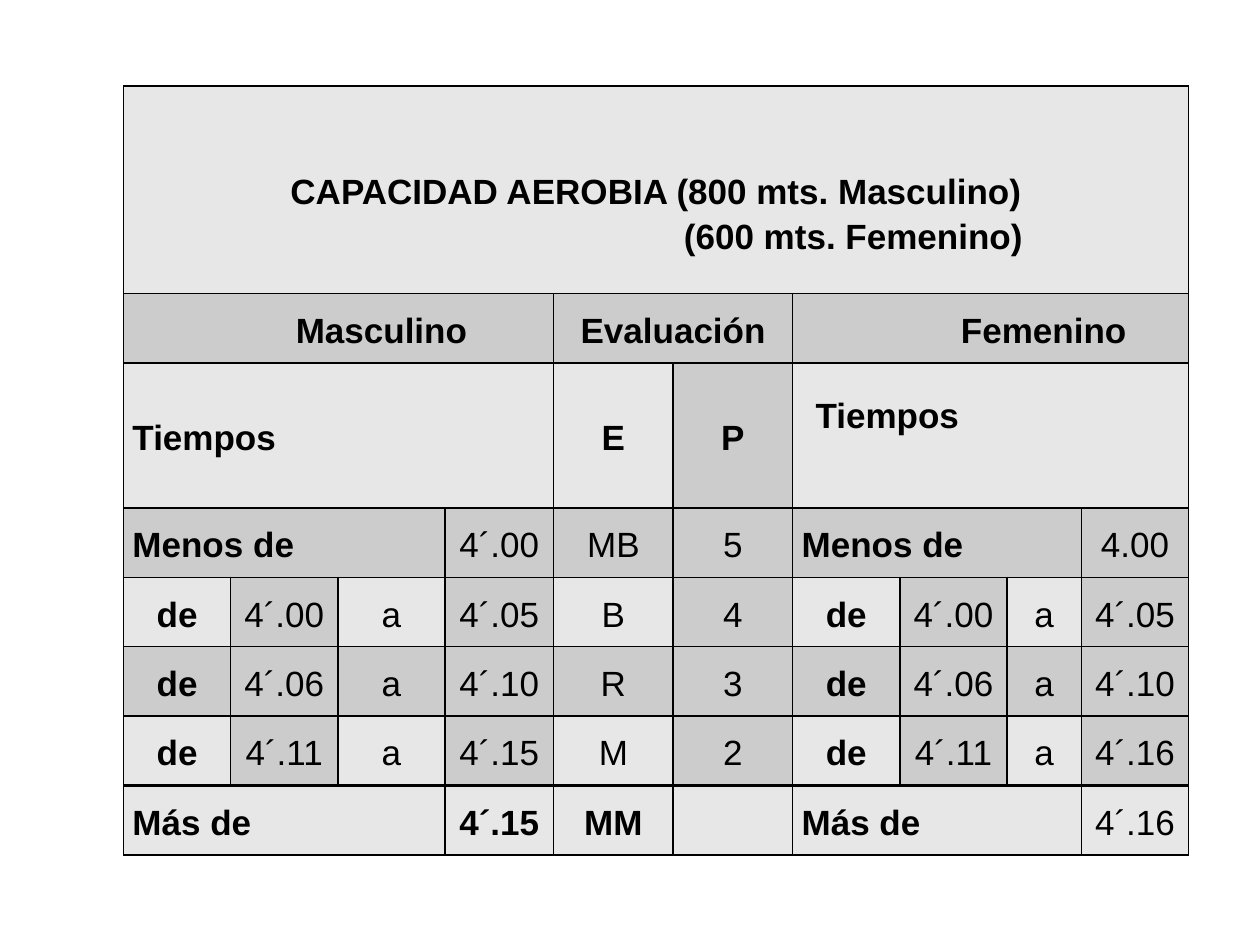
from lxml.etree import SubElement
from pptx import Presentation
from pptx.dml.color import RGBColor
from pptx.enum.text import MSO_ANCHOR as Anchor, PP_ALIGN as Align
from pptx.oxml.ns import qn
from pptx.util import Cm, Pt

BLACK = RGBColor(0x00, 0x00, 0x00)
LIGHT = RGBColor(0xE7, 0xE7, 0xE7)
DARK = RGBColor(0xCC, 0xCC, 0xCC)

COLUMN_WIDTHS = [2.16] * 4 + [2.41] * 2 + [2.16] * 2 + [1.5, 2.16]
ROW_HEIGHTS = [4.19, 1.4, 2.92] + [1.4] * 5
LAST_ROW = len(ROW_HEIGHTS) - 1
LINE_HEIGHT = 0.91
SIDE_MARGIN = 0.18

# Each row maps a starting column to its text
TITLE = "CAPACIDAD AEROBIA (800 mts. Masculino)\n(600 mts. Femenino)"
ROWS = [
    {0: TITLE},
    {0: "Masculino", 4: "Evaluación", 6: "Femenino"},
    {0: "Tiempos", 4: "E", 5: "P", 6: "Tiempos"},
    {0: "Menos de", 3: "4´.00", 4: "MB", 5: "5", 6: "Menos de", 9: "4.00"},
    dict(enumerate(["de", "4´.00", "a", "4´.05", "B", "4", "de", "4´.00", "a", "4´.05"])),
    dict(enumerate(["de", "4´.06", "a", "4´.10", "R", "3", "de", "4´.06", "a", "4´.10"])),
    dict(enumerate(["de", "4´.11", "a", "4´.15", "M", "2", "de", "4´.11", "a", "4´.16"])),
    {0: "Más de", 3: "4´.15", 4: "MM", 5: "", 6: "Más de", 9: "4´.16"},
]
LEFT_ALIGNED = ("Tiempos", "Menos de", "Más de")


def set_borders(cell, top_width):
    """Draw the four edges of a cell; call before filling it."""
    properties = cell._tc.get_or_add_tcPr()
    for edge, width in (("L", 1), ("R", 1), ("T", top_width), ("B", 1)):
        line = SubElement(properties, qn(f"a:ln{edge}"), w=str(Pt(width)))
        fill = SubElement(line, qn("a:solidFill"))
        SubElement(fill, qn("a:srgbClr"), val=str(BLACK))


def set_fill(cell, row, column):
    """Odd rows are dark; even body rows have dark odd columns."""
    is_dark = 0 < row < LAST_ROW and (row % 2 or column % 2)
    cell.fill.solid()
    cell.fill.fore_color.rgb = DARK if is_dark else LIGHT


def write_text(cell, text, bold):
    cell.vertical_anchor = Anchor.MIDDLE
    cell.margin_left = cell.margin_right = Cm(SIDE_MARGIN)
    cell.margin_top = cell.margin_bottom = 0
    cell.text = text
    for para in cell.text_frame.paragraphs:
        para.alignment = Align.LEFT if text in LEFT_ALIGNED else Align.CENTER
        para.line_spacing = 1.15
        font = para.font
        font.name, font.size, font.bold = "Arial", Pt(20), bold
        font.color.rgb = BLACK


def is_bold(row, column):
    return row < 3 or column in (0, 6) or (row == LAST_ROW and column in (3, 4))


def add_score_table(page):
    frame = page.shapes.add_table(
        len(ROW_HEIGHTS), len(COLUMN_WIDTHS), Cm(2.49), Cm(1.73),
        Cm(sum(COLUMN_WIDTHS)), Cm(sum(ROW_HEIGHTS)))
    table = frame.table
    table.first_row = table.horz_banding = False
    for column, width in zip(table.columns, COLUMN_WIDTHS):
        column.width = Cm(width)
    for row, height in zip(table.rows, ROW_HEIGHTS):
        row.height = Cm(height)

    for row, texts in enumerate(ROWS):
        for column in range(len(COLUMN_WIDTHS)):
            cell = table.cell(row, column)
            set_borders(cell, 2 if row == LAST_ROW else 1)
            set_fill(cell, row, column)
        # A cell reaches up to the next starting column
        starts = list(texts)
        for start, end in zip(starts, starts[1:] + [len(COLUMN_WIDTHS)]):
            cell = table.cell(row, start)
            if end - start > 1:
                cell.merge(table.cell(row, end - 1))
            write_text(cell, texts[start], is_bold(row, start))
    return table


def shift_headings(table):
    """Move the headings that sit off the centre of their cells."""
    title = table.cell(0, 0)
    title.margin_top = Cm(LINE_HEIGHT)
    second_line = title.text_frame.paragraphs[1]
    second_line._p.get_or_add_pPr().set("marL", str(Cm(7.96)))

    table.cell(1, 0).margin_left = Cm(SIDE_MARGIN + 1.73)
    table.cell(1, 6).margin_left = Cm(SIDE_MARGIN + 2.14)
    female_times = table.cell(2, 6)
    female_times.margin_left = Cm(SIDE_MARGIN + 0.28)
    female_times.margin_bottom = Cm(LINE_HEIGHT)


def main():
    deck = Presentation()
    deck.slide_width, deck.slide_height = Cm(25.4), Cm(19.05)
    page = deck.slides.add_slide(deck.slide_layouts[6])
    shift_headings(add_score_table(page))
    deck.save("out.pptx")


if __name__ == "__main__":
    main()
